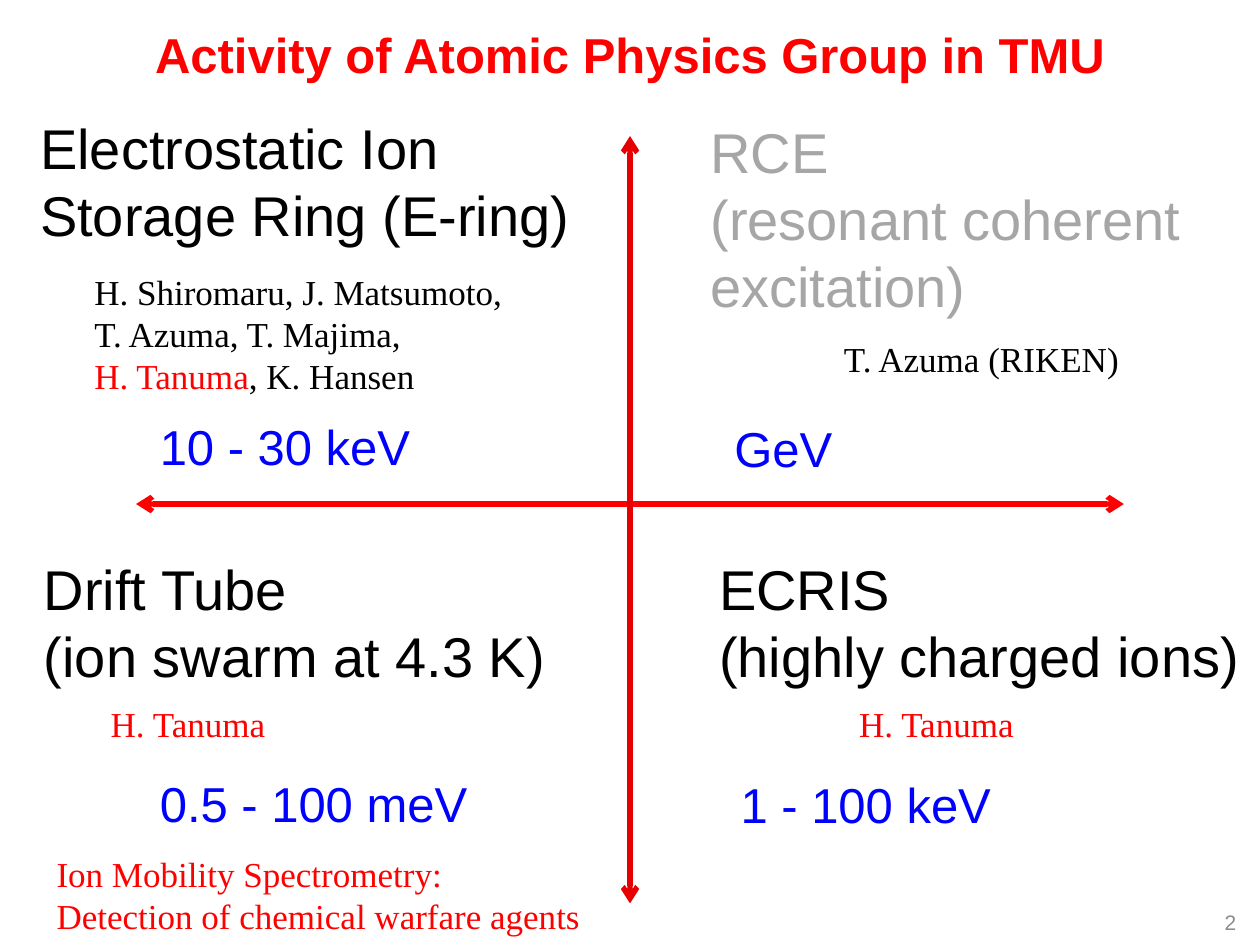
from dataclasses import dataclass

from lxml.etree import SubElement
from pptx import Presentation
from pptx.dml.color import RGBColor
from pptx.enum.shapes import MSO_CONNECTOR as Connector
from pptx.enum.text import MSO_ANCHOR as Anchor, PP_ALIGN as Align
from pptx.oxml.ns import qn
from pptx.util import Inches, Pt

RED, BLUE, BLACK = "FF0000", "0000FF", "000000"
LIGHT_GREY, NUMBER_GREY, AXIS_RED = "A6A6A6", "8C8C8C", "E70000"


@dataclass(frozen=True)
class Style:
    font: str
    size: int
    bold: bool = False
    wrap: bool = True
    align: Align = Align.LEFT
    anchor: Anchor = Anchor.TOP


@dataclass(frozen=True)
class Span:
    text: str
    color: str


@dataclass(frozen=True)
class Label:
    style: Style
    place: tuple[float, float, float, float]
    color: str
    lines: tuple[str | tuple[Span, ...], ...]


@dataclass(frozen=True)
class Axis:
    start: tuple[float, float]
    end: tuple[float, float]
    color: str


TITLE = Style("Arial", 28, bold=True, align=Align.CENTER, anchor=Anchor.MIDDLE)
TOPIC = Style("Arial", 32)
ENERGY = Style("Arial", 28, wrap=False)
PEOPLE = Style("Times New Roman", 20, wrap=False)
NUMBER = Style("Arial", 12, align=Align.RIGHT, anchor=Anchor.MIDDLE)

AXES = (
    Axis((1.08, 4), (8.92, 4), RED),
    Axis((5, 1.08), (5, 7.17), AXIS_RED),
)

LABELS = (
    Label(TITLE, (0.5, 0, 9, 0.85), RED, ("Activity of Atomic Physics Group in TMU",)),
    # Upper left: storage ring
    Label(TOPIC, (0.22, 0.85, 4.52, 1.18), BLACK, ("Electrostatic Ion Storage Ring (E-ring)",)),
    Label(PEOPLE, (0.65, 2.1, 3.47, 1.11), BLACK, (
        "H. Shiromaru, J. Matsumoto,",
        "T. Azuma, T. Majima,",
        (Span("H. Tanuma", RED), Span(", K. Hansen", BLACK)),
    )),
    Label(ENERGY, (1.17, 3.26, 2.24, 0.57), BLUE, ("10 - 30 keV",)),
    # Upper right: resonant coherent excitation
    Label(TOPIC, (5.54, 0.88, 4.33, 1.75), LIGHT_GREY, ("RCE", "(resonant coherent excitation)")),
    Label(PEOPLE, (6.6, 2.63, 2.4, 0.44), BLACK, ("T. Azuma (RIKEN)",)),
    Label(ENERGY, (5.73, 3.27, 1, 0.57), BLUE, ("GeV",)),
    # Lower left: drift tube
    Label(TOPIC, (0.25, 4.35, 4.22, 1.18), BLACK, ("Drift Tube", "(ion swarm at 4.3 K)")),
    Label(PEOPLE, (0.78, 5.53, 1.45, 0.44), RED, ("H. Tanuma",)),
    Label(ENERGY, (1.17, 6.09, 2.68, 0.57), BLUE, ("0.5 - 100 meV",)),
    Label(PEOPLE, (0.35, 6.72, 4.39, 0.77), RED, (
        "Ion Mobility Spectrometry:",
        "Detection of chemical warfare agents",
    )),
    # Lower right: ion source
    Label(TOPIC, (5.61, 4.35, 4.33, 1.18), BLACK, ("ECRIS", "(highly charged ions)")),
    Label(PEOPLE, (6.72, 5.53, 1.45, 0.44), RED, ("H. Tanuma",)),
    Label(ENERGY, (5.78, 6.1, 2.24, 0.57), BLUE, ("1 - 100 keV",)),
    # Page number
    Label(NUMBER, (7.58, 7.23, 2.33, 0.18), NUMBER_GREY, ("2",)),
)


def rgb(color: str) -> RGBColor:
    return RGBColor.from_string(color)


def draw_axis(page, axis: Axis) -> None:
    points = (Inches(value) for value in axis.start + axis.end)
    connector = page.shapes.add_connector(Connector.STRAIGHT, *points)
    connector.line.color.rgb = rgb(axis.color)
    connector.line.width = Pt(3)
    outline = connector.line._get_or_add_ln()
    for end in ("a:headEnd", "a:tailEnd"):
        SubElement(outline, qn(end), type="arrow")
    SubElement(connector._element.spPr, qn("a:effectLst"))


def draw_label(page, label: Label) -> None:
    style = label.style
    box = page.shapes.add_textbox(*(Inches(value) for value in label.place))
    frame = box.text_frame
    frame.word_wrap = style.wrap
    frame.vertical_anchor = style.anchor
    for index, line in enumerate(label.lines):
        para = frame.add_paragraph() if index else frame.paragraphs[0]
        para.alignment = style.align
        para.font.name = style.font
        para.font.size = Pt(style.size)
        para.font.bold = style.bold
        if isinstance(line, str):
            para.font.color.rgb = rgb(label.color)
            para.add_run().text = line
            continue
        for span in line:
            run = para.add_run()
            run.text = span.text
            run.font.color.rgb = rgb(span.color)


def main() -> None:
    deck = Presentation()
    deck.slide_width, deck.slide_height = Inches(10), Inches(7.5)
    page = deck.slides.add_slide(deck.slide_layouts[6])
    for axis in AXES:
        draw_axis(page, axis)
    for label in LABELS:
        draw_label(page, label)
    deck.save("out.pptx")


if __name__ == "__main__":
    main()
